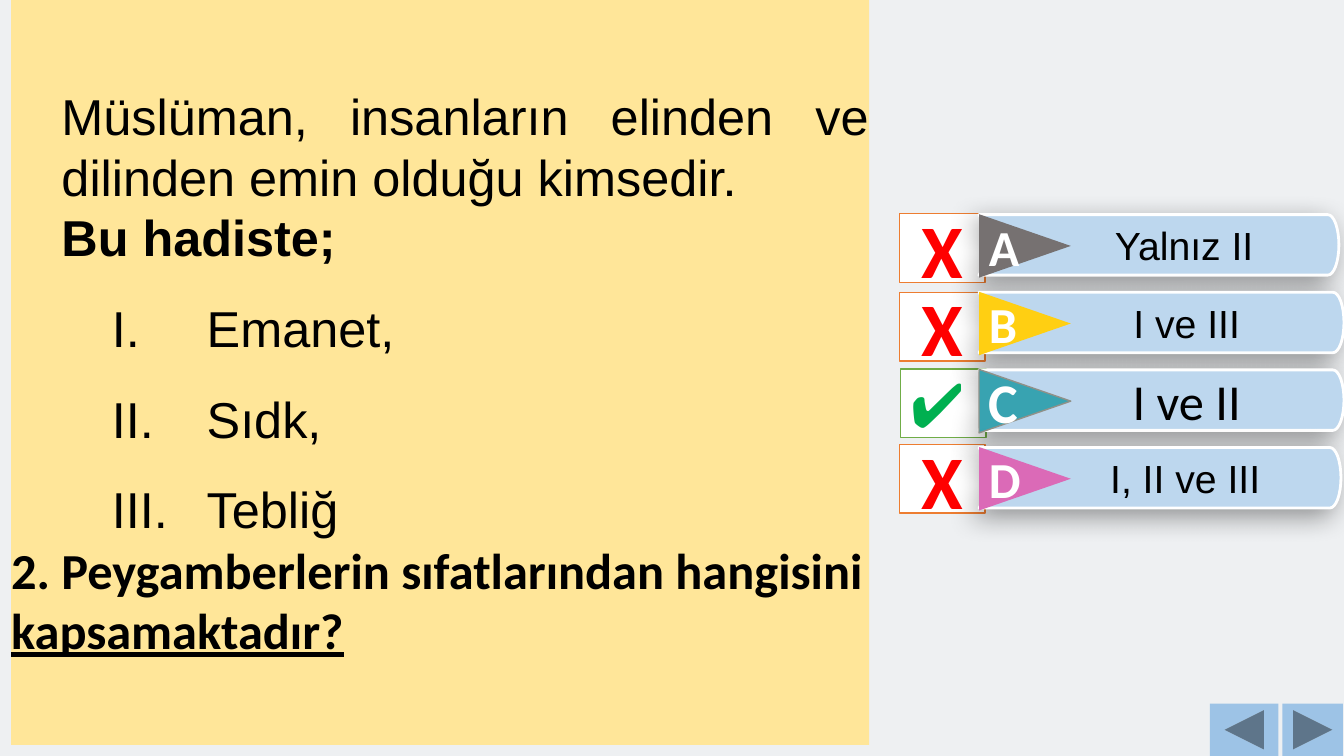
from dataclasses import dataclass
from math import cos, pi, sin

from lxml.etree import SubElement
from pptx import Presentation
from pptx.dml.color import RGBColor
from pptx.enum.shapes import MSO_SHAPE as SHAPE
from pptx.enum.text import MSO_ANCHOR as ANCHOR, PP_ALIGN as ALIGN
from pptx.oxml.ns import qn
from pptx.util import Emu, Inches, Pt

PROMPT = ["Müslüman, insanların elinden ve dilinden emin olduğu kimsedir.", "Bu hadiste;"]
ITEMS = ["Emanet,", "Sıdk,", "Tebliğ"]
QUESTION = ["2. Peygamberlerin sıfatlarından hangisini ", "kapsamaktadır?"]

# letter, answer, is correct, arrow colour, mark top, bar right edge
OPTIONS = [
    ("A", "Yalnız II", False, "767171", 2.12, 13.28),
    ("B", "I ve III", False, "FFCF12", 2.90, 13.33),
    ("C", "I ve II", True, "38A3B1", 3.66, 13.33),
    ("D", "I, II ve III", False, "DB6AB7", 4.41, 13.30),
]
BUTTONS = [
    (SHAPE.ACTION_BUTTON_BACK_OR_PREVIOUS, 12, 0.68),
    (SHAPE.ACTION_BUTTON_FORWARD_OR_NEXT, 12.72, 0.6),
]


@dataclass(frozen=True)
class Theme:
    back: str = "EEF0F2"
    panel: str = "FFE699"
    bar: str = "BDD7EE"
    button: str = "9DC3E6"
    white: str = "FFFFFF"
    black: str = "000000"
    right: str = "00B050"
    right_edge: str = "70AD47"
    wrong: str = "FF0000"
    wrong_edge: str = "ED7D31"
    arrow_edge: str = "909189"
    sans: str = "Arial"
    label: str = "Calibri"
    body: int = 36
    answer: int = 28
    letter: int = 36
    big_letter: int = 40
    check: int = 44
    cross: int = 54


T = Theme()
BAR_LEFT, BAR_TOP, BAR_HEIGHT, BAR_PITCH = 9.71, 2.13, 0.6, 0.77
NOTCH, CAP, CAP_STEPS = 0.18, 0.11, 16
ARROW_WIDTH, ARROW_LENGTH = 0.63, 0.91


def paint(sp, fill, edge=None, width=1):
    sp.shadow.inherit = False
    sp.fill.solid()
    sp.fill.fore_color.rgb = RGBColor.from_string(fill)
    if edge:
        sp.line.color.rgb = RGBColor.from_string(edge)
        sp.line.width = Pt(width)
    else:
        sp.line.fill.background()


def add_box(shapes, kind, at, fill, edge=None):
    sp = shapes.add_shape(kind, *map(Inches, at))
    paint(sp, fill, edge)
    return sp


def add_run(p, text, color, **font):
    r = p.add_run()
    r.text = text
    r.font.color.rgb = RGBColor.from_string(color)
    for key, value in font.items():
        setattr(r.font, key, value)


def indent(p, left, first=0, level=1):
    p.level = level
    pPr = p._p.get_or_add_pPr()
    for key, value in {"marL": left, "indent": first}.items():
        pPr.set(key, str(Inches(value)))
    return pPr


def centred(sp):
    sp.text_frame.vertical_anchor = ANCHOR.MIDDLE
    p = sp.text_frame.paragraphs[0]
    p.alignment = ALIGN.CENTER
    return p


def add_mark(s, correct, top):
    left = 8.93 if correct else 8.92
    edge = T.right_edge if correct else T.wrong_edge
    p = centred(add_box(s.shapes, SHAPE.RECTANGLE, (left, top, 0.85, 0.68), T.white, edge))
    if correct:
        p.alignment = ALIGN.LEFT
        add_run(p, "✔", T.right, name=T.label, size=Pt(T.check))
    else:
        add_run(p, "X", T.wrong, name=T.label, size=Pt(T.cross), bold=True)


def add_bar(shapes, top, right):
    """Bar with a notched left end, an elliptical right end and a soft shadow."""
    half = BAR_HEIGHT / 2
    angles = [pi * (i / CAP_STEPS - 0.5) for i in range(CAP_STEPS + 1)]
    outline = [(right - CAP + CAP * cos(a), top + half + half * sin(a)) for a in angles]
    outline += [(BAR_LEFT, top + BAR_HEIGHT), (BAR_LEFT + NOTCH, top + half)]
    builder = shapes.build_freeform(Inches(BAR_LEFT), Inches(top))
    builder.add_line_segments([(Inches(x), Inches(y)) for x, y in outline])
    bar = builder.convert_to_shape()
    paint(bar, T.bar, T.white, 2)
    effects = bar._element.spPr.find(qn("a:effectLst"))
    shadow = SubElement(effects, qn("a:outerShdw"), blurRad=str(Pt(20)),
                        dist=str(Pt(7)), dir=str(135 * 60000), rotWithShape="0")
    color = SubElement(shadow, qn("a:srgbClr"), val=T.black)
    SubElement(color, qn("a:alpha"), val="40000")
    return bar


def add_option(s, top, letter, answer, correct, color, right):
    shapes = s.shapes.add_group_shape().shapes
    p = centred(add_bar(shapes, top, right))
    indent(p, 0.5)
    name, size = (T.label, T.body) if correct else (T.sans, T.answer)
    add_run(p, answer, T.black, name=name, size=Pt(size))

    at = (9.85, top + (BAR_HEIGHT - ARROW_LENGTH) / 2 + 0.01, ARROW_WIDTH, ARROW_LENGTH)
    arrow = add_box(shapes, SHAPE.ISOSCELES_TRIANGLE, at, color,
                    T.arrow_edge if correct else None)
    arrow.rotation = 90
    arrow.text_frame._txBody.bodyPr.set("vert", "vert270")
    size = T.big_letter if correct else T.letter
    add_run(centred(arrow), letter, T.white, name=T.label, size=Pt(size), bold=True)


def add_question(s):
    sp = add_box(s.shapes, SHAPE.RECTANGLE, (0.11, 0, 8.51, 7.39), T.panel)
    tf = sp.text_frame
    for side in ("left", "top", "right", "bottom"):
        setattr(tf, f"margin_{side}", Emu(0))
    tf.word_wrap = True
    tf.vertical_anchor = ANCHOR.MIDDLE
    sans = {"name": T.sans, "size": Pt(T.body)}
    for i, text in enumerate(PROMPT):
        p = tf.add_paragraph() if i else tf.paragraphs[0]
        p.alignment = ALIGN.JUSTIFY
        indent(p, 0.5)
        add_run(p, text, T.black, bold=i > 0, **sans)
    for text in ITEMS:
        p = tf.add_paragraph()
        p.alignment = ALIGN.LEFT
        p.line_spacing = 1.5
        pPr = indent(p, 1.94, -0.94, level=2)
        SubElement(pPr, qn("a:buFont"), typeface="+mj-lt")
        SubElement(pPr, qn("a:buAutoNum"), type="romanUcPeriod")
        add_run(p, text, T.black, **sans)
    p = tf.add_paragraph()
    p.alignment = ALIGN.LEFT
    for i, text in enumerate(QUESTION):
        add_run(p, text, T.black, name=T.label, size=Pt(T.body), bold=True, underline=i > 0)


def main():
    prs = Presentation()
    prs.slide_width, prs.slide_height = Inches(13.33), Inches(7.5)
    s = prs.slides.add_slide(prs.slide_layouts[6])
    s.background.fill.solid()
    s.background.fill.fore_color.rgb = RGBColor.from_string(T.back)
    for _, _, correct, _, mark_top, _ in OPTIONS:
        add_mark(s, correct, mark_top)
    for i, (letter, answer, correct, color, _, right) in enumerate(OPTIONS):
        add_option(s, BAR_TOP + i * BAR_PITCH, letter, answer, correct, color, right)
    for kind, left, width in BUTTONS:
        add_box(s.shapes, kind, (left, 6.98, width, 0.52), T.button)
    add_question(s)
    prs.save("out.pptx")


if __name__ == "__main__":
    main()
